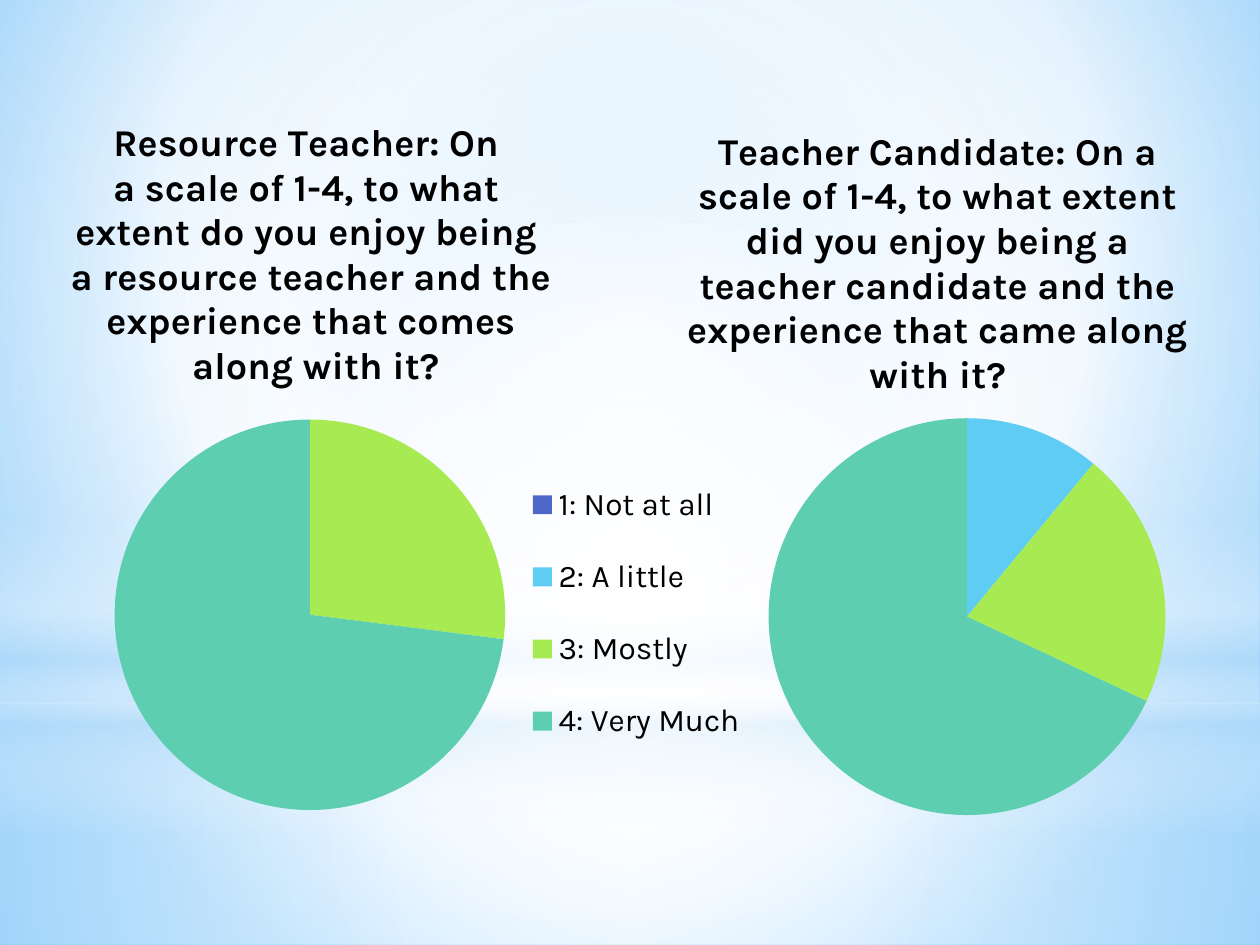
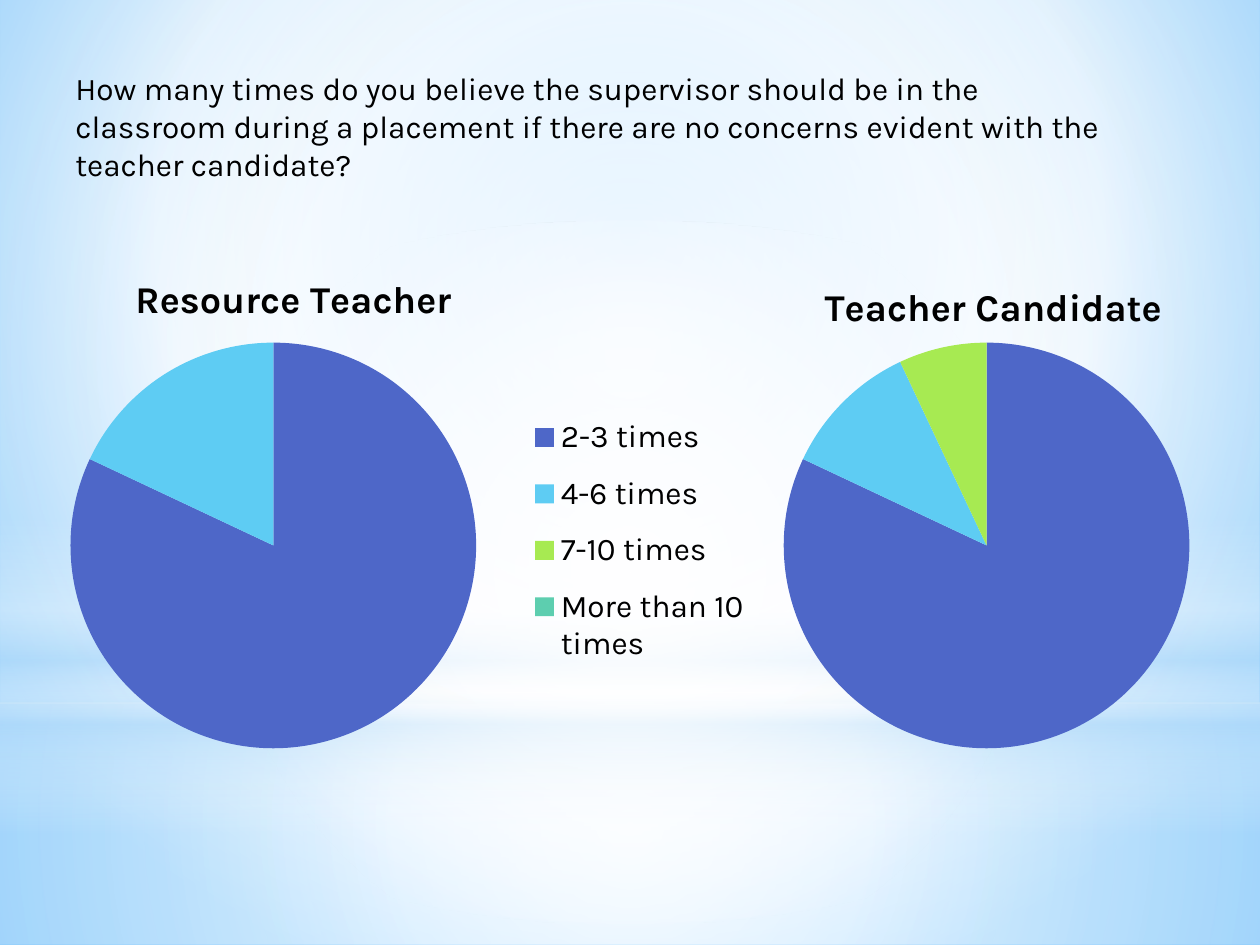
import dataclasses

import lxml.etree
import pptx
import pptx.chart.data
import pptx.dml.color
import pptx.enum.chart
import pptx.enum.shapes
import pptx.oxml.ns
import pptx.util

Inches = pptx.util.Inches
qn = pptx.oxml.ns.qn

# Shared look
FONT = "Karla"
BLACK, WHITE, MIST = "000000", "FFFFFF", "B4DCFA"
SLICE_COLORS = ["4E67C8", "5ECCF3", "A7EA52", "5DCEAF"]
BODY_SIZE = 18
TITLE_SIZE = 1.2 * BODY_SIZE
CENTER = (50, 50, 50, 50)

Box = tuple[float, float, float, float]


@dataclasses.dataclass
class Gradient:
    stops: list[tuple[int, str, int]]  # position, colour, opacity in percent
    focus: Box | None = None  # without a focus the gradient runs downwards


@dataclasses.dataclass
class Glow:
    box: Box
    gradient: Gradient
    outline: pptx.enum.shapes.MSO_SHAPE = pptx.enum.shapes.MSO_SHAPE.RECTANGLE


@dataclasses.dataclass
class Pie:
    frame: Box
    title: str
    title_at: tuple[float, float]
    disc: tuple[float, float, float]  # left, top, diameter
    series: str
    categories: list[str]
    values: list[int]
    legend: Box | None = None


SKY = Gradient([(0, "9ED5FF", 100), (60, WHITE, 100), (100, "5BB9FF", 100)],
               (20, 10, 20, 60))
GLOWS = [
    Glow((0, 5.58, 10, 1.92),
         Gradient([(0, WHITE, 91), (37, WHITE, 76), (100, MIST, 79)], CENTER)),
    Glow((0, 0, 10, 5.58),
         Gradient([(0, WHITE, 89), (48, WHITE, 62), (100, MIST, 79)], CENTER)),
    Glow((0, 4.12, 10, 2.5),
         Gradient([(0, WHITE, 0), (29, WHITE, 30), (45, MIST, 40),
                   (55, WHITE, 26), (65, MIST, 60), (100, WHITE, 0)])),
    Glow((0, 1.75, 10, 5.58),
         Gradient([(0, WHITE, 100), (56, WHITE, 0)], CENTER),
         pptx.enum.shapes.MSO_SHAPE.OVAL),
]

# Survey answers
RATINGS = ["1", "2", "3", "4"]
ENJOYMENT = [
    Pie((-0.08, 0.5, 6.33, 6.75),
        "Resource Teacher: On \na scale of 1-4, to what \nextent do you enjoy being \n"
        "a resource teacher and the experience that comes\n along with it?",
        (0.53, 0.91), (0.91, 3.33, 3.1), "Series 1",
        ["1: Not at all", "2: A little", "3: Mostly", "4: Very Much"],
        [0, 0, 27, 73], legend=(4.1, 3.58, 1.9, 2.57)),
    Pie((4.67, 0.5, 5.25, 6.5),
        "Teacher Candidate: On a scale of 1-4, to what extent did you enjoy being a "
        "teacher candidate and the experience that came along with it?",
        (5.4, 0.94), (6.1, 3.32, 3.15), "Series 1", RATINGS, [0, 11, 21, 68]),
]
VISITS_QUESTION = (
    "How many times do you believe the supervisor should be in the classroom during "
    "a placement if there are no concerns evident with the teacher candidate?")
VISITS = [
    Pie((-0.17, 1.92, 6.58, 4.17), "Resource Teacher",
        (1.02, 2.12), (0.56, 2.72, 3.22), "Resource Teacher",
        ["2-3 times", "4-6 times", "7-10 times", "More than 10 times"],
        [82, 18, 0, 0], legend=(4.15, 3.17, 1.85, 2.24)),
    Pie((5.17, 1.92, 5.33, 4.17), "Teacher Candidate",
        (6.49, 2.18), (6.22, 2.72, 3.22), "Teacher Candidate",
        RATINGS, [82, 11, 7, 0]),
]


def color(code: str) -> pptx.dml.color.RGBColor:
    return pptx.dml.color.RGBColor.from_string(code)


def style(font, size: float, bold: bool = False) -> None:
    font.name = FONT
    font.size = pptx.util.Pt(size)
    font.bold = bold
    font.color.rgb = color(BLACK)


def add_child(parent, tag: str, **attributes):
    return lxml.etree.SubElement(
        parent, qn(tag), {key: str(value) for key, value in attributes.items()})


def apply_gradient(fill, properties, gradient: Gradient) -> None:
    """Swap a plain fill for the gradient."""
    fill.solid()
    plain = properties.find(qn("a:solidFill"))
    grad = add_child(properties, "a:gradFill", rotWithShape=1)
    stops = add_child(grad, "a:gsLst")
    for position, code, opacity in gradient.stops:
        stop = add_child(stops, "a:gs", pos=position * 1000)
        add_child(add_child(stop, "a:srgbClr", val=code),
                  "a:alpha", val=opacity * 1000)
    if gradient.focus:
        circle = add_child(grad, "a:path", path="circle")
        edges = zip("ltrb", gradient.focus)
        add_child(circle, "a:fillToRect", **{edge: part * 1000 for edge, part in edges})
    else:
        add_child(grad, "a:lin", ang=90 * 60000, scaled=0)
    properties.replace(plain, grad)


def add_backdrop(slide) -> None:
    fill = slide.background.fill
    fill.solid()
    apply_gradient(fill, slide.element.find(".//" + qn("p:bgPr")), SKY)
    for glow in GLOWS:
        shape = slide.shapes.add_shape(glow.outline, *map(Inches, glow.box))
        shape.shadow.inherit = False
        shape.line.fill.background()
        apply_gradient(shape.fill, shape.element.spPr, glow.gradient)


def place(part, index: int, frame: Box, at: tuple[float, ...]) -> None:
    """Put a chart part at slide inches: left, top and, if given, width, height."""
    for old in part.findall(qn("c:layout")):
        part.remove(old)
    layout = lxml.etree.Element(qn("c:layout"))
    manual = add_child(layout, "c:manualLayout")
    if part.tag == qn("c:plotArea"):
        add_child(manual, "c:layoutTarget", val="inner")
    for axis in "xy":
        add_child(manual, f"c:{axis}Mode", val="edge")
    left, top, width, height = frame
    shares = [(at[0] - left) / width, (at[1] - top) / height]
    shares += [length / whole for length, whole in zip(at[2:], (width, height))]
    for name, share in zip("xywh", shares):
        add_child(manual, f"c:{name}", val=round(share, 4))
    part.insert(index, layout)


def add_pie(slide, pie: Pie) -> None:
    answers = pptx.chart.data.CategoryChartData()
    answers.categories = pie.categories
    answers.add_series(pie.series, pie.values)
    chart = slide.shapes.add_chart(
        pptx.enum.chart.XL_CHART_TYPE.PIE, *map(Inches, pie.frame), answers).chart
    style(chart.font, BODY_SIZE)

    # Slices
    plot = chart.plots[0]
    plot.vary_by_categories = True
    for index, code in enumerate(SLICE_COLORS):
        slice_fill = plot.series[0].points[index].format.fill
        slice_fill.solid()
        slice_fill.fore_color.rgb = color(code)

    # Title and legend
    chart.has_title = True
    title = chart.chart_title.text_frame
    title.text = pie.title
    for paragraph in title.paragraphs:
        for run in paragraph.runs:
            style(run.font, TITLE_SIZE, bold=True)
    chart.has_legend = pie.legend is not None
    if pie.legend:
        chart.legend.position = pptx.enum.chart.XL_LEGEND_POSITION.RIGHT
        chart.legend.include_in_layout = False

    # Positions
    body = chart.element.find(qn("c:chart"))
    left, top, diameter = pie.disc
    place(body.find(qn("c:plotArea")), 0, pie.frame, (left, top, diameter, diameter))
    place(body.find(qn("c:title")), 1, pie.frame, pie.title_at)
    if pie.legend:
        place(body.find(qn("c:legend")), 1, pie.frame, pie.legend)


def add_question(slide, question: str, box: Box) -> None:
    frame = slide.shapes.add_textbox(*map(Inches, box)).text_frame
    frame.word_wrap = True
    frame.text = question
    style(frame.paragraphs[0].runs[0].font, BODY_SIZE)


def add_survey_slide(deck, pies: list[Pie]):
    slide = deck.slides.add_slide(deck.slide_layouts[6])
    add_backdrop(slide)
    for pie in pies:
        add_pie(slide, pie)
    return slide


def main() -> None:
    deck = pptx.Presentation()
    deck.slide_width, deck.slide_height = Inches(10), Inches(7.5)
    add_survey_slide(deck, ENJOYMENT)
    visits = add_survey_slide(deck, VISITS)
    add_question(visits, VISITS_QUESTION, (0.5, 0.5, 8.58, 1.01))
    deck.save("out.pptx")


if __name__ == "__main__":
    main()
